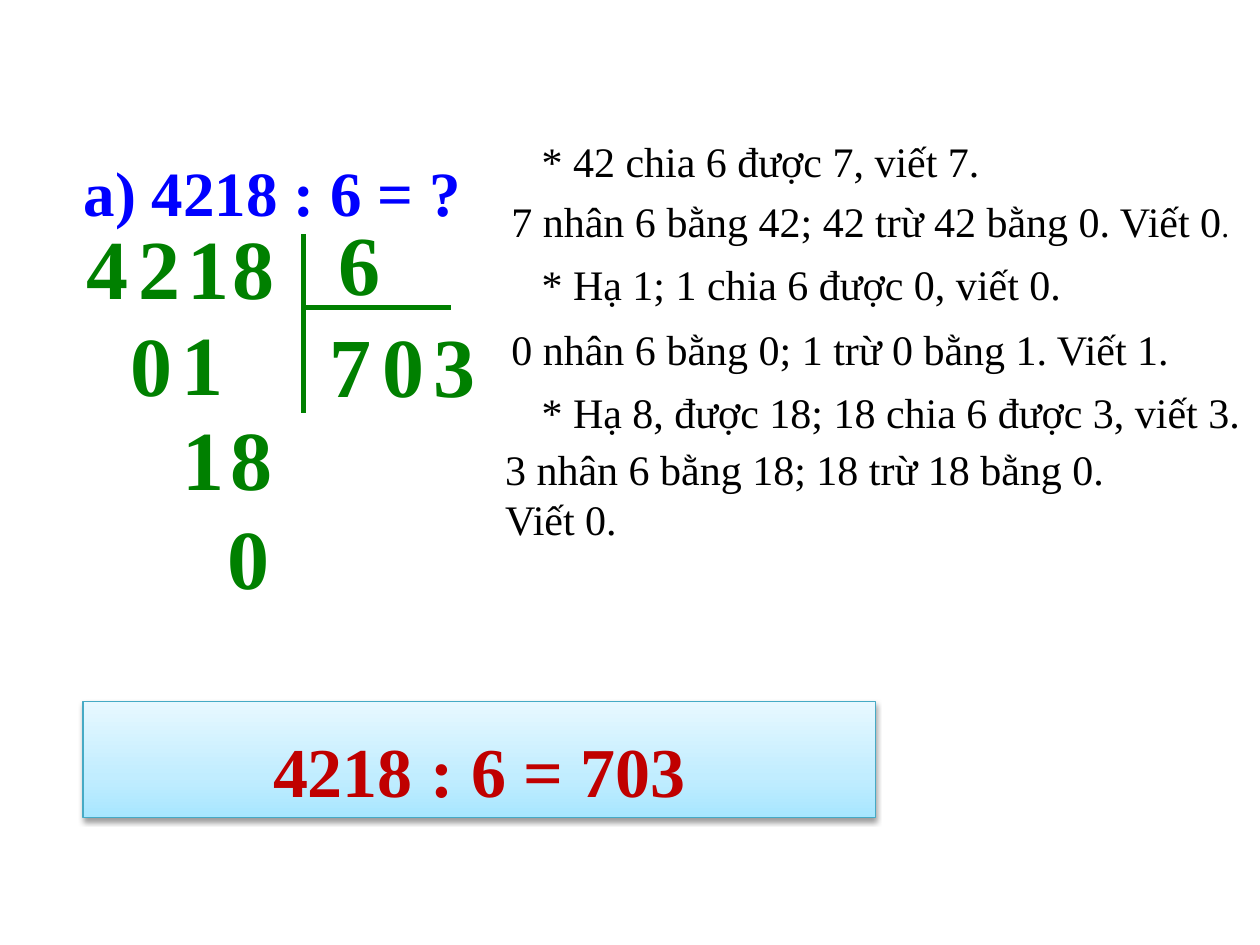
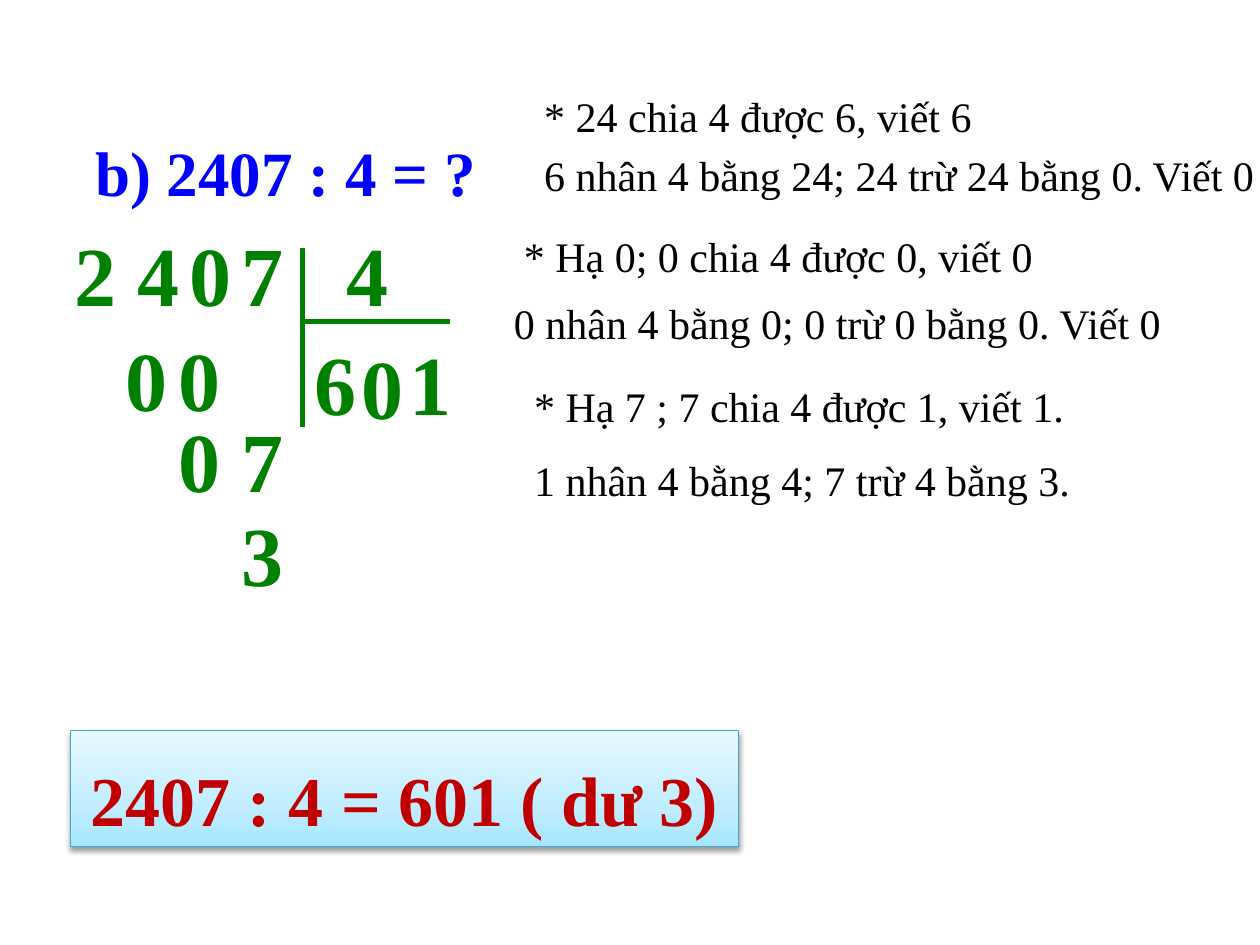
import pptx
import pptx.util
import pptx.dml.color
import pptx.enum.text
import pptx.enum.shapes
import pptx.oxml
import pptx.oxml.ns
from lxml import etree

COLORS = {"digit": "008000", "title": "0000FF", "step": "000000", "result": "C00000",
          "border": "46AAC5", "low": "A7E6FF", "mid": "C1EDFF", "high": "E7F8FF"}
FORMATS = {
    "digit": {"size": 48, "bold": True},
    "title": {"size": 36, "bold": True},
    "step": {"size": 24, "bold": False},
    "result": {"size": 40, "bold": True},
}
FONT = "Times New Roman"
COLUMNS, ROWS = 100, 75
DIGIT_HEIGHT, STEP_HEIGHT, RESULT_HEIGHT = 9.1, 5, 9.2
BAR_WIDTH, BAR_HEIGHT, BAR_DROP = 11.7, 14.2, 5.8
ALIGN = pptx.enum.text.PP_ALIGN
ANCHOR = pptx.enum.text.MSO_ANCHOR

DIVISIONS = [
    {
        "title": ("a) 4218 : 6 = ?", 1.6, 11.7, 40),
        "digits": [
            (16.6, [("4", 5.9, 8.3), ("2", 10, 8.3), ("1", 13.9, 8.3), ("8", 17.5, 8.3)]),
            (16.3, [("6", 25.9, 13.3)]),
            (24.4, [("7", 25.2, 2.6), ("0", 29.4, 6.7), ("3", 33.4, 5.8)]),
            (24.3, [("0", 9.4, 5.8)]),
            (24.2, [("1", 13.4, 5.8)]),
            (31.8, [("1", 13.5, 6.7), ("8", 17.3, 5)]),
            (39.6, [("0", 17.1, 6.7)]),
        ],
        "bars": (24.1, 18.6),
        "steps": [
            ([[("* 42 chia 6 được 7, viết 7.", 24)]], 42, 10.3, 50),
            ([[("7 nhân 6 bằng 42; 42 trừ 42 bằng 0. Viết 0", 24), (".", 18)]], 39.6, 15, 63.5),
            ([[("* Hạ 1; 1 chia 6 được 0, viết 0.", 24)]], 42, 20, 50),
            ([[("0 nhân 6 bằng 0; 1 trừ 0 bằng 1. Viết 1.", 24)]], 39.6, 25.2, 56.5),
            ([[("* Hạ 8, được 18; 18 chia 6 được 3, viết 3.", 24)]], 42, 30.2, 58),
            ([[("3 nhân 6 bằng 18; 18 trừ 18 bằng 0.", 24)], [("Viết 0.", 24)]], 39.1, 34.7, 55.8),
        ],
        "result": ("4218 : 6 = 703", 6.6, 55.7, 62.9),
    },
    {
        "title": ("b) 2407 : 4 = ?", -2.3, 10.1, 49.9),
        "digits": [
            (17.2, [("2 4", 4.9, 11.7), ("0", 14.1, 6.6), ("7", 18.2, 6.6), ("4", 26.5, 13.3)]),
            (25.8, [("6", 24, 5), ("1", 31.5, 5.8)]),
            (26.1, [("0", 27.7, 6.7)]),
            (25.5, [("0", 9, 5), ("0", 13.2, 5.8)]),
            (31.9, [("0", 13.2, 5.8), ("7", 18.2, 5.8)]),
            (39.4, [("3", 18.2, 6.7)]),
        ],
        "bars": (24, 19.7),
        "steps": [
            ([[("* 24 chia 4 được 6, viết 6", 24)]], 42.2, 6.7, 54.2),
            ([[("6 nhân 4 bằng 24; 24 trừ 24 bằng 0. Viết 0", 24)]], 42.2, 11.4, 60.9),
            ([[("* Hạ 0; 0 chia 4 được 0, viết 0", 24)]], 40.6, 17.8, 57),
            ([[("0 nhân 4 bằng 0; 0 trừ 0 bằng 0. Viết 0", 24)]], 39.8, 23.1, 60.2),
            ([[("* Hạ 7 ; 7 chia 4 được 1, viết 1.", 24)]], 41.4, 29.7, 58.6),
            ([[("1 nhân 4 bằng 4; 7 trừ 4 bằng 3.", 24)]], 41.4, 35.6, 61.7),
        ],
        "result": ("2407 : 4 = 601 ( dư 3)", 5.6, 58, 53),
    },
]


def rgb(name):
    return pptx.dml.color.RGBColor.from_string(COLORS[name])


class Deck:
    def __init__(self):
        self.prs = pptx.Presentation()
        self.prs.slide_width = pptx.util.Inches(10)
        self.prs.slide_height = pptx.util.Inches(7.5)
        self.s = None

    def new_slide(self):
        self.s = self.prs.slides.add_slide(self.prs.slide_layouts[5])

    def x(self, columns):
        return round(self.prs.slide_width * columns / COLUMNS)

    def y(self, rows):
        return round(self.prs.slide_height * rows / ROWS)

    def box(self, left, top, width, height):
        return self.x(left), self.y(top), self.x(width), self.y(height)

    def add_text(self, p, text, kind, size=None):
        r = p.add_run()
        r.text = text
        values = dict(FORMATS[kind], name=FONT)
        values["size"] = pptx.util.Pt(size or values["size"])
        for key, value in values.items():
            setattr(r.font, key, value)
        r.font.color.rgb = rgb(kind)

    def title(self, text, left, top, width):
        sp = self.s.shapes.title
        place = dict(zip(("left", "top", "width", "height"), self.box(left, top, width, 7.1)))
        for key, value in place.items():
            setattr(sp, key, value)
        tf = sp.text_frame
        tf.auto_size = pptx.enum.text.MSO_AUTO_SIZE.NONE
        tf.vertical_anchor = ANCHOR.TOP
        p = tf.paragraphs[0]
        p.alignment = ALIGN.CENTER
        self.add_text(p, text, "title")

    def text(self, paragraphs, kind, left, top, width, height):
        sp = self.s.shapes.add_textbox(*self.box(left, top, width, height))
        tf = sp.text_frame
        tf.word_wrap = True
        for i, runs in enumerate(paragraphs):
            p = tf.add_paragraph() if i else tf.paragraphs[0]
            for text, size in runs:
                self.add_text(p, text, kind, size)

    def digits(self, top, cells):
        for text, left, width in cells:
            self.text([[(text, None)]], "digit", left, top, width, DIGIT_HEIGHT)

    def step(self, paragraphs, left, top, width):
        height = STEP_HEIGHT + 4.1 * (len(paragraphs) - 1)
        self.text(paragraphs, "step", left, top, width, height)

    def bars(self, left, top):
        group = self.s.shapes.add_group_shape()
        middle = top + BAR_DROP
        for ends in ((left, top, left, top + BAR_HEIGHT),
                     (left, middle, left + BAR_WIDTH, middle)):
            x1, y1, x2, y2 = ends
            line = group.shapes.add_connector(
                pptx.enum.shapes.MSO_CONNECTOR.STRAIGHT,
                self.x(x1), self.y(y1), self.x(x2), self.y(y2))
            line.line.color.rgb = rgb("digit")
            line.line.width = pptx.util.Pt(3)
            etree.SubElement(line._element.spPr, pptx.oxml.ns.qn("a:effectLst"))

    def result(self, text, left, top, width):
        sp = self.s.shapes.add_shape(pptx.enum.shapes.MSO_SHAPE.RECTANGLE,
                                     *self.box(left, top, width, RESULT_HEIGHT))
        sp.line.color.rgb = rgb("border")
        sp.line.width = pptx.util.Pt(0.75)
        self.gradient(sp)
        self.shadow(sp)
        tf = sp.text_frame
        tf.word_wrap = True
        tf.vertical_anchor = ANCHOR.BOTTOM
        p = tf.paragraphs[0]
        p.alignment = ALIGN.CENTER
        self.add_text(p, text, "result")

    def gradient(self, sp):
        sp.fill.gradient()
        sp.fill.gradient_angle = 90
        stops = sp._element.spPr.find(".//" + pptx.oxml.ns.qn("a:gsLst"))
        for stop in list(stops):
            stops.remove(stop)
        for name, share in (("low", 0), ("mid", 35), ("high", 100)):
            stops.append(pptx.oxml.parse_xml(
                f'<a:gs {pptx.oxml.ns.nsdecls("a")} pos="{share * 1000}">'
                f'<a:srgbClr val="{COLORS[name]}"/></a:gs>'))

    def shadow(self, sp):
        sp.shadow.inherit = False
        effects = sp._element.spPr.find(pptx.oxml.ns.qn("a:effectLst"))
        blur, dist = pptx.util.Pt(3.1), pptx.util.Pt(1.6)
        effects.append(pptx.oxml.parse_xml(
            f'<a:outerShdw {pptx.oxml.ns.nsdecls("a")} blurRad="{blur}" dist="{dist}" '
            'dir="5400000" rotWithShape="0"><a:srgbClr val="000000">'
            '<a:alpha val="38000"/></a:srgbClr></a:outerShdw>'))


def main():
    deck = Deck()
    for division in DIVISIONS:
        deck.new_slide()
        deck.title(*division["title"])
        for top, cells in division["digits"]:
            deck.digits(top, cells)
        deck.bars(*division["bars"])
        for step in division["steps"]:
            deck.step(*step)
        deck.result(*division["result"])
    deck.prs.save("out.pptx")


if __name__ == "__main__":
    main()
